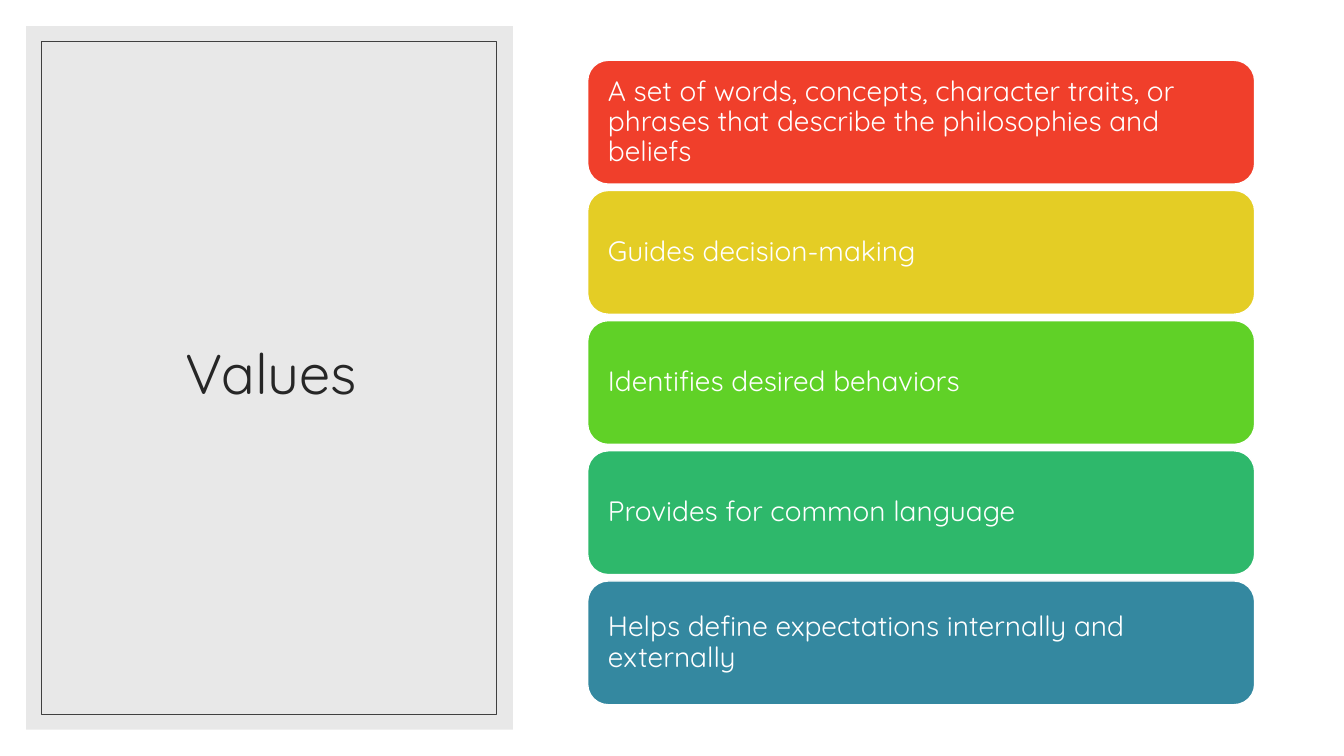
import dataclasses

import pptx
import pptx.dml.color
import pptx.enum.shapes
import pptx.enum.text
import pptx.oxml
import pptx.oxml.ns
import pptx.util
from pptx.util import Cm

Shapes = pptx.enum.shapes.MSO_SHAPE
Align = pptx.enum.text.PP_ALIGN


@dataclasses.dataclass(frozen=True)
class Theme:
    font: str = "Quicksand"
    title_size: int = 40
    bar_size: int = 20
    background: str = "FFFFFF"
    panel: str = "D9D9D9"
    panel_opacity: int = 60
    frame: str = "404040"
    title: str = "262626"
    bar_text: str = "FFFFFF"
    bar_line: str = "FFFFFF"


THEME = Theme()

VALUES = [
    ("A set of words, concepts, character traits, or phrases that describe "
     "the philosophies and beliefs", "F03F2B"),
    ("Guides decision-making", "E4CD25"),
    ("Identifies desired behaviors", "60D127"),
    ("Provides for common language", "2EB86B"),
    ("Helps define expectations internally and externally", "3488A0"),
]

# Value bars: placement in centimetres
BAR_LEFT, BAR_TOP, BAR_WIDTH, BAR_HEIGHT = 14.81, 1.52, 16.81, 3.12
BAR_PITCH = 3.28
BAR_INSET = 0.36


def rgb(code):
    return pptx.dml.color.RGBColor.from_string(code)


def apply(target, values):
    for name, value in values.items():
        setattr(target, name, value)


def add_block(page, kind, place, fill=None, line=None, line_width=1):
    """Add a preset shape; without a fill or line colour that part is empty."""
    block = page.shapes.add_shape(kind, *map(Cm, place))
    block.shadow.inherit = False
    if fill:
        block.fill.solid()
        block.fill.fore_color.rgb = rgb(fill)
    else:
        block.fill.background()
    if line:
        block.line.color.rgb = rgb(line)
        block.line.width = pptx.util.Pt(line_width)
    else:
        block.line.fill.background()
    return block


def set_opacity(block, percent):
    color = block.fill._xPr.find(".//" + pptx.oxml.ns.qn("a:srgbClr"))
    alpha = pptx.oxml.parse_xml(
        f'<a:alpha {pptx.oxml.ns.nsdecls("a")} val="{percent * 1000}"/>')
    color.append(alpha)


def write_text(box, text, size, color, frame_format, para_format):
    """Write one paragraph, centred vertically in its box."""
    frame = box.text_frame
    apply(frame, {
        "word_wrap": True,
        "vertical_anchor": pptx.enum.text.MSO_ANCHOR.MIDDLE,
        **frame_format,
    })
    para = frame.paragraphs[0]
    apply(para, {"line_spacing": 0.9, **para_format})
    span = para.add_run()
    span.text = text
    apply(span.font, {"name": THEME.font, "size": pptx.util.Pt(size)})
    span.font.color.rgb = rgb(color)


def add_title_panel(page, title):
    panel = add_block(page, Shapes.RECTANGLE, (0.66, 0.66, 12.27, 17.73),
                      fill=THEME.panel)
    set_opacity(panel, THEME.panel_opacity)
    add_block(page, Shapes.RECTANGLE, (1.04, 1.04, 11.46, 16.97),
              line=THEME.frame, line_width=0.5)
    box = page.shapes.add_textbox(*map(Cm, (1.6, 1.55, 10.46, 15.85)))
    write_text(box, title, THEME.title_size, THEME.title, {},
               {"alignment": Align.CENTER})


def add_value_bar(page, index, text, color):
    top = BAR_TOP + index * BAR_PITCH
    bar = add_block(page, Shapes.ROUNDED_RECTANGLE,
                    (BAR_LEFT, top, BAR_WIDTH, BAR_HEIGHT),
                    fill=color, line=THEME.bar_line)
    sides = ("left", "top", "right", "bottom")
    insets = {f"margin_{side}": Cm(BAR_INSET) for side in sides}
    write_text(bar, text, THEME.bar_size, THEME.bar_text, insets,
               {"alignment": Align.LEFT, "space_after": pptx.util.Pt(7)})


def main():
    deck = pptx.Presentation()
    apply(deck, {"slide_width": Cm(33.87), "slide_height": Cm(19.05)})
    page = deck.slides.add_slide(deck.slide_layouts[6])
    page.background.fill.solid()
    page.background.fill.fore_color.rgb = rgb(THEME.background)

    # Left: title in a framed panel
    add_title_panel(page, "Values")

    # Right: stack of coloured bars
    for index, (text, color) in enumerate(VALUES):
        add_value_bar(page, index, text, color)

    deck.save("out.pptx")


if __name__ == "__main__":
    main()
